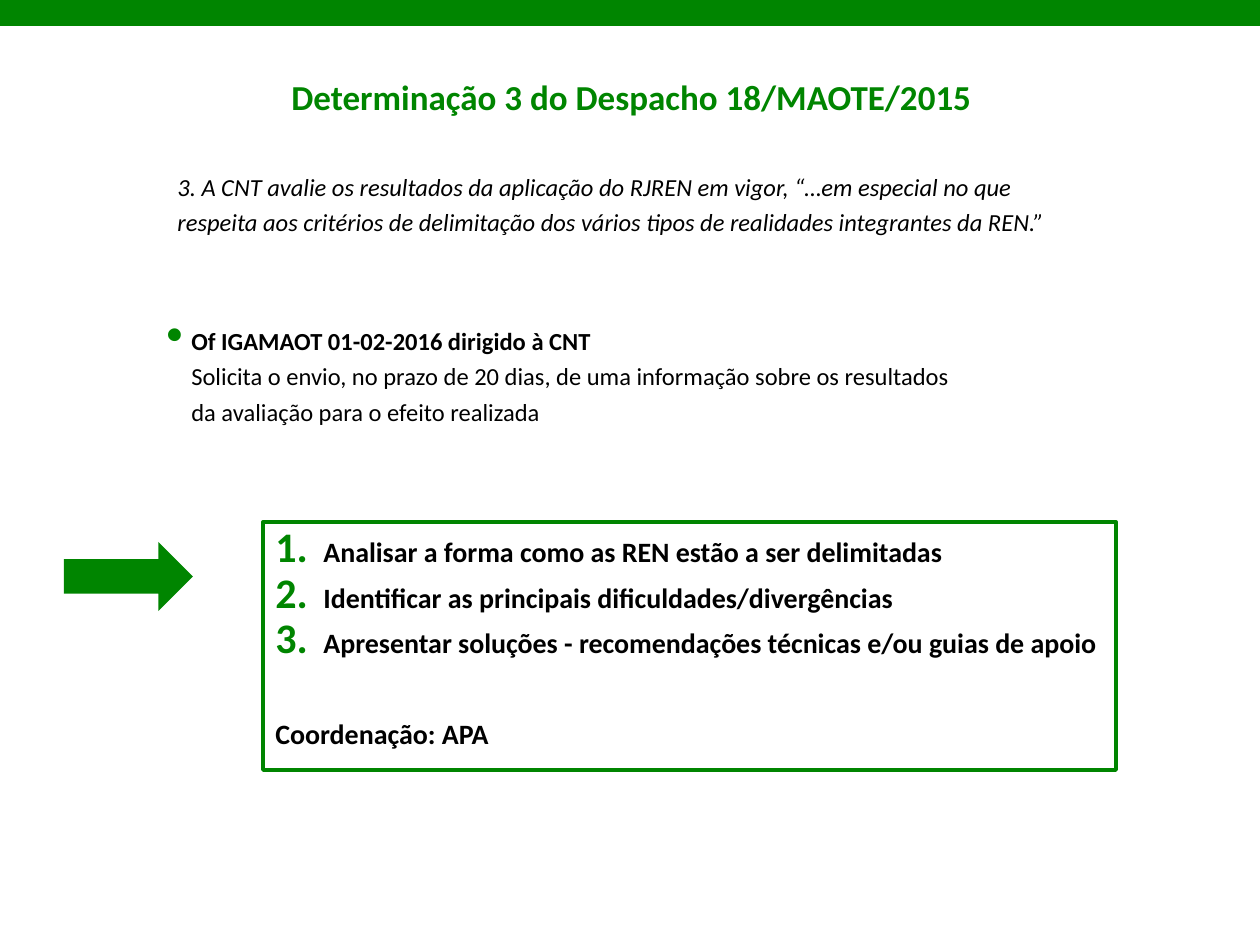
from lxml import etree
from pptx import Presentation
from pptx.dml.color import RGBColor
from pptx.enum.shapes import MSO_SHAPE
from pptx.enum.text import MSO_ANCHOR, PP_ALIGN
from pptx.oxml.ns import qn
from pptx.util import Emu, Pt

EMU_PER_PX = 914400 / 126
FONT = "Calibri"
COLORS = {"green": "008500", "black": "000000", "white": "FFFFFF"}
RECTANGLE = MSO_SHAPE.RECTANGLE
RIGHT_ARROW = MSO_SHAPE.RIGHT_ARROW
TOP = MSO_ANCHOR.TOP
MIDDLE = MSO_ANCHOR.MIDDLE
LEFT = PP_ALIGN.LEFT
CENTER = PP_ALIGN.CENTER
TASKS = [
    "Analisar a forma como as REN estão a ser delimitadas",
    "Identificar as principais dificuldades/divergências",
    "Apresentar soluções - recomendações técnicas e/ou guias de apoio",
]


def px(value):
    return Emu(round(value * EMU_PER_PX))


def color(name):
    return RGBColor.from_string(COLORS[name])


def add_bullet(paragraph, kind, attributes, percent):
    properties = paragraph._p.get_or_add_pPr()
    bullet_color = etree.SubElement(properties, qn("a:buClr"))
    etree.SubElement(bullet_color, qn("a:srgbClr"), val=COLORS["green"])
    etree.SubElement(properties, qn("a:buSzPct"), val=str(percent * 1000))
    etree.SubElement(properties, qn(kind), attributes)


def write(frame, text, size=14, fill="black", bold=False, italic=False,
          align=LEFT, before=0, margin=0, indent=0, bullet=None):
    paragraph = frame.paragraphs[0]
    if paragraph.runs:
        paragraph = frame.add_paragraph()
    properties = paragraph._p.get_or_add_pPr()
    properties.set("marL", str(px(margin)))
    properties.set("indent", str(px(indent)))
    if bullet:
        add_bullet(paragraph, *bullet)
    paragraph.alignment = align
    paragraph.line_spacing = 1.2
    paragraph.space_before = Pt(before)
    run = paragraph.add_run()
    run.text = text
    run.font.name = FONT
    run.font.size = Pt(size)
    run.font.bold = bold
    run.font.italic = italic
    run.font.color.rgb = color(fill)


def add_shape(slide, kind, box, fill, line=None):
    shape = slide.shapes.add_shape(kind, *map(px, box))
    shape.shadow.inherit = False
    shape.fill.solid()
    shape.fill.fore_color.rgb = color(fill)
    if line:
        shape.line.color.rgb = color(line)
        shape.line.width = Pt(2.25)
    else:
        shape.line.fill.background()
    return shape


def add_text_box(slide, box):
    frame = slide.shapes.add_textbox(*map(px, box)).text_frame
    frame.word_wrap = True
    return frame


def set_title(slide, text, box):
    title = slide.shapes.title
    title.left, title.top, title.width, title.height = map(px, box)
    title.text_frame.vertical_anchor = MIDDLE
    write(title.text_frame, text, size=20, fill="green", bold=True, align=CENTER)


def add_task_box(slide):
    shape = add_shape(slide, RECTANGLE, (263, 522, 853, 248), "white", "green")
    frame = shape.text_frame
    frame.word_wrap = True
    frame.vertical_anchor = TOP
    number = ("a:buAutoNum", {"type": "arabicPeriod"}, 150)
    for index, task in enumerate(TASKS):
        write(frame, task, size=16, bold=True, before=3 if index else 0,
              margin=48, indent=-48, bullet=number)
    write(frame, "Coordenação: APA", size=16, bold=True, before=29)


def main():
    presentation = Presentation()
    presentation.slide_width = px(1260)
    presentation.slide_height = px(945)
    slide = presentation.slides.add_slide(presentation.slide_layouts[5])

    add_shape(slide, RECTANGLE, (0, 0, 1260, 26), "green")
    set_title(slide, "Determinação 3 do Despacho 18/MAOTE/2015", (54, 30, 1155, 125))

    quote = add_text_box(slide, (115, 160, 953, 84))
    write(quote, "3. A CNT avalie os resultados da aplicação do RJREN em vigor, "
          "“…em especial no que respeita aos critérios de delimitação dos vários "
          "tipos de realidades integrantes da REN.”", italic=True, margin=50)

    add_task_box(slide)
    add_shape(slide, RIGHT_ARROW, (64, 542, 129, 69), "green")

    request = add_text_box(slide, (154, 314, 833, 120))
    write(request, "Of IGAMAOT 01-02-2016 dirigido à CNT", bold=True,
          margin=25, indent=-25, bullet=("a:buChar", {"char": "•"}, 200))
    write(request, "Solicita o envio, no prazo de 20 dias, de uma informação sobre "
          "os resultados da avaliação para o efeito realizada", margin=25)

    presentation.save("out.pptx")


if __name__ == "__main__":
    main()
